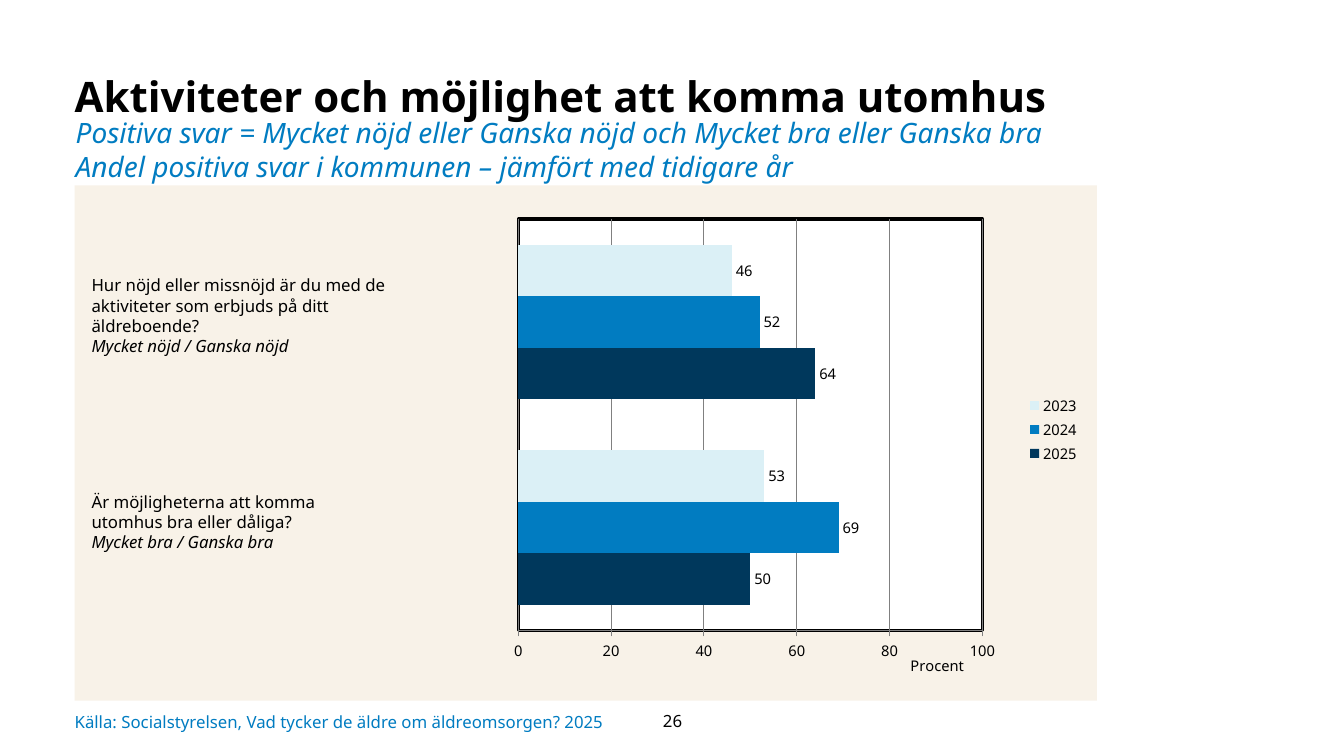
import pptx
import pptx.chart.data
import pptx.dml.color
import pptx.enum.chart
import pptx.enum.text
import pptx.oxml
import pptx.oxml.ns
import pptx.util

Inches = pptx.util.Inches
Pt = pptx.util.Pt

FONT = "Noto Sans"
COLOURS = {
    "black": "000000",
    "white": "FFFFFF",
    "sand": "F8F2E8",
    "grey": "808080",
    "blue": "017CC1",
    "navy": "00385C",
    "ice": "DBF0F6",
}
YEARS = [
    ("2025", (50, 64), "navy"),
    ("2024", (69, 52), "blue"),
    ("2023", (53, 46), "ice"),
]
TEXT_INSETS = (0.1, 0.05, 0.1, 0.05)
NO_INSETS = (0, 0, 0, 0)


def rgb(colour):
    return pptx.dml.color.RGBColor.from_string(COLOURS[colour])


def style_font(font, size, colour="black", bold=False, italic=False):
    font.name = FONT
    font.size = Pt(size)
    font.bold = bold
    font.italic = italic
    font.color.rgb = rgb(colour)


def add_text(page, place, lines, size=12, colour="black", insets=TEXT_INSETS, bold=False,
             middle=False):
    """Add a text box; lines is a list of (text, italic) paragraphs."""
    box = page.shapes.add_textbox(*(Inches(length) for length in place))
    frame = box.text_frame
    frame.word_wrap = True
    frame.margin_left, frame.margin_top, frame.margin_right, frame.margin_bottom = (
        Inches(inset) for inset in insets)
    if middle:
        frame.vertical_anchor = pptx.enum.text.MSO_ANCHOR.MIDDLE
    frame.text = "\n".join(text for text, italic in lines)
    for para, (text, italic) in zip(frame.paragraphs, lines):
        for span in para.runs:
            style_font(span.font, size, colour, bold, italic)
    return frame


def layout_xml(**values):
    """Build a manual chart layout from its c: children."""
    children = "".join(f'<c:{name} val="{value}"/>' for name, value in values.items())
    return pptx.oxml.parse_xml(
        f'<c:layout {pptx.oxml.ns.nsdecls("c")}>'
        f"<c:manualLayout>{children}</c:manualLayout></c:layout>")


def place_part(part, after, **values):
    """Give a chart part a manual layout right after the named child, or first."""
    for old in part.findall(pptx.oxml.ns.qn("c:layout")):
        part.remove(old)
    index = 0 if after is None else part.index(part.find(pptx.oxml.ns.qn(after))) + 1
    part.insert(index, layout_xml(**values))


def fill_xml(colour, line):
    return pptx.oxml.parse_xml(
        f'<c:spPr {pptx.oxml.ns.nsdecls("c", "a")}>'
        f'<a:solidFill><a:srgbClr val="{COLOURS[colour]}"/></a:solidFill>{line}</c:spPr>')


def paint_backgrounds(chart):
    chart_space = chart.element
    chart_space.find(pptx.oxml.ns.qn("c:chart")).addnext(
        fill_xml("sand", "<a:ln><a:noFill/></a:ln>"))
    plot_area = chart_space.chart.plotArea
    plot_area.append(fill_xml(
        "white",
        f'<a:ln w="{Pt(2.25)}"><a:solidFill><a:srgbClr val="{COLOURS["black"]}"/>'
        "</a:solidFill></a:ln>"))
    place_part(plot_area, None, layoutTarget="inner", xMode="edge", yMode="edge",
               x=0.434, y=0.065, w=0.454, h=0.799)


def style_axes(chart):
    chart.category_axis.visible = False
    axis = chart.value_axis
    axis.minimum_scale, axis.maximum_scale, axis.major_unit = 0, 100, 20
    axis.major_tick_mark = pptx.enum.chart.XL_TICK_MARK.OUTSIDE
    axis.has_major_gridlines = True
    for line in (axis.major_gridlines.format.line, axis.format.line):
        line.color.rgb = rgb("grey")
        line.width = Pt(0.75)
    style_font(axis.tick_labels.font, 10.5)
    axis.has_title = True
    title = axis.axis_title
    title.text_frame.text = "Procent"
    style_font(title.text_frame.paragraphs[0].runs[0].font, 10.5)
    place_part(axis._element.find(pptx.oxml.ns.qn("c:title")), "c:tx",
               xMode="edge", yMode="edge", x=0.815, y=0.905)


def style_series(plot):
    plot.gap_width = 100
    plot.overlap = 0
    plot.vary_by_categories = False
    for series, (year, values, colour) in zip(plot.series, YEARS):
        series.format.fill.solid()
        series.format.fill.fore_color.rgb = rgb(colour)
        series.invert_if_negative = False
        labels = series.data_labels
        labels.show_value = True
        labels.position = pptx.enum.chart.XL_LABEL_POSITION.OUTSIDE_END
        style_font(labels.font, 10.5)


def add_year_chart(page):
    data = pptx.chart.data.CategoryChartData()
    data.categories = ["1", "2"]
    for year, values, colour in YEARS:
        data.add_series(year, values)
    chart = page.shapes.add_chart(
        pptx.enum.chart.XL_CHART_TYPE.BAR_CLUSTERED,
        Inches(0.74), Inches(1.84), Inches(10.14), Inches(5.11), data).chart
    style_font(chart.font, 10)
    chart.has_title = False
    chart.has_legend = True
    chart.legend.position = pptx.enum.chart.XL_LEGEND_POSITION.RIGHT
    chart.legend.include_in_layout = False
    style_font(chart.legend.font, 10.5)
    place_part(chart.legend._element, "c:legendPos",
               xMode="edge", yMode="edge", x=0.93, y=0.4)
    style_axes(chart)
    style_series(chart.plots[0])
    paint_backgrounds(chart)


def main():
    deck = pptx.Presentation()
    deck.slide_width, deck.slide_height = Inches(13.33), Inches(7.5)
    page = deck.slides.add_slide(deck.slide_layouts[6])

    title = add_text(page, (0.74, 0.65, 9.97, 0.56),
                     [("Aktiviteter och möjlighet att komma utomhus", False)],
                     size=30, insets=(0, 0, 0.1, 0.05), bold=True)
    title.paragraphs[0].line_spacing = 1.1
    add_text(page, (0.75, 1.15, 10.82, 0.65),
             [("Positiva svar = Mycket nöjd eller Ganska nöjd och Mycket bra eller Ganska bra\v"
               "Andel positiva svar i kommunen – jämfört med tidigare år", True)],
             size=20, colour="blue", insets=NO_INSETS)
    add_year_chart(page)
    add_text(page, (0.81, 2.68, 3.31, 0.91),
             [("Hur nöjd eller missnöjd är du med de\v"
               "aktiviteter som erbjuds på ditt äldreboende?", False),
              ("Mycket nöjd / Ganska nöjd", True)])
    add_text(page, (0.81, 4.83, 3.14, 0.71),
             [("Är möjligheterna att komma utomhus bra eller dåliga?", False),
              ("Mycket bra / Ganska bra", True)])
    add_text(page, (0.74, 7.02, 5.91, 0.29),
             [("Källa: Socialstyrelsen, Vad tycker de äldre om äldreomsorgen? 2025", False)],
             colour="blue", insets=NO_INSETS, middle=True)
    number = add_text(page, (6.16, 6.95, 1.02, 0.4), [("26", False)], middle=True)
    number.paragraphs[0].alignment = pptx.enum.text.PP_ALIGN.CENTER

    deck.save("out.pptx")


if __name__ == "__main__":
    main()
